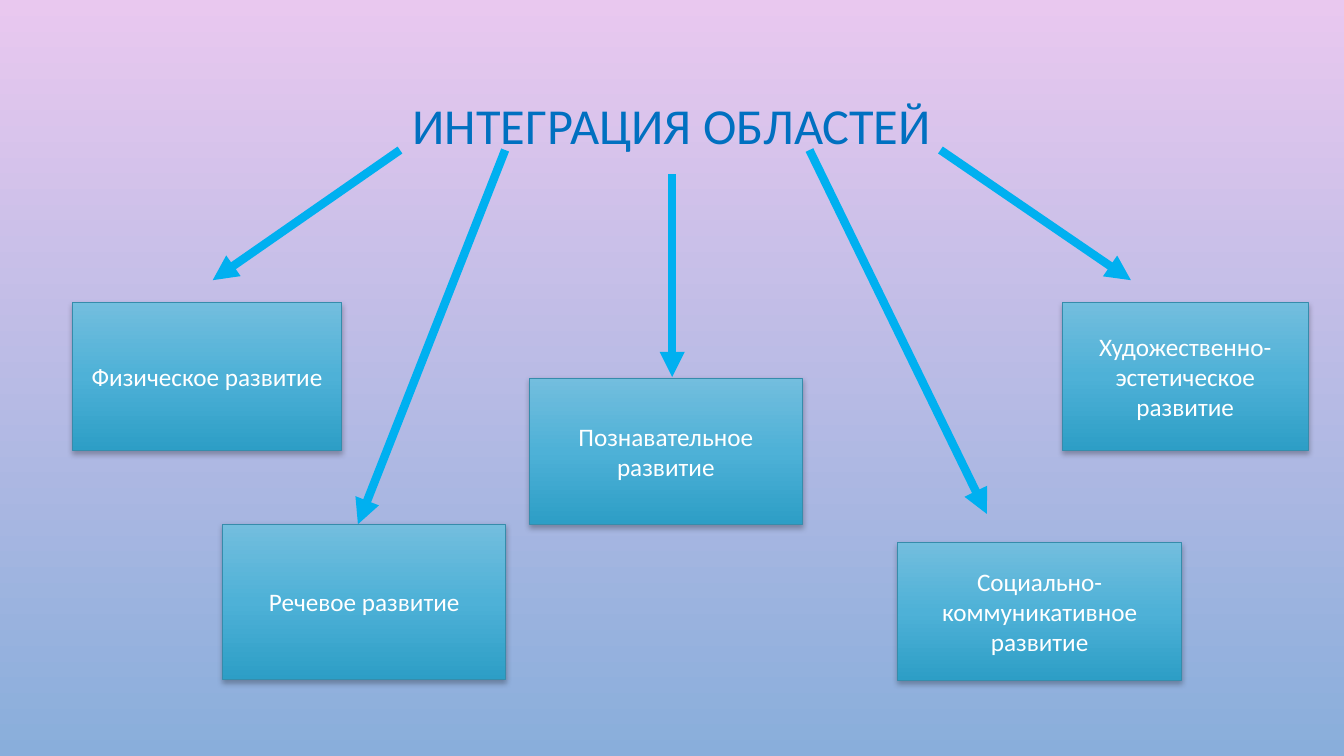
from copy import deepcopy

from lxml.etree import SubElement
from pptx import Presentation
from pptx.dml.color import RGBColor
from pptx.enum.shapes import MSO_CONNECTOR, MSO_SHAPE
from pptx.enum.text import MSO_ANCHOR, PP_ALIGN
from pptx.oxml.ns import qn
from pptx.util import Cm, Pt


def rgb(value):
    return RGBColor.from_string(value)


def write_centred(shape, text, size, color):
    frame = shape.text_frame
    frame.word_wrap = True
    frame.vertical_anchor = MSO_ANCHOR.MIDDLE
    paragraph = frame.paragraphs[0]
    paragraph.text = text
    paragraph.alignment = PP_ALIGN.CENTER
    paragraph.font.name = "Calibri"
    paragraph.font.size = Pt(size)
    paragraph.font.color.rgb = rgb(color)
    return paragraph


presentation = Presentation()
presentation.slide_width = Cm(33.87)
presentation.slide_height = Cm(19.05)
slide = presentation.slides.add_slide(presentation.slide_layouts[6])

background = slide.background.fill
background.gradient()
background.gradient_angle = 270
for stop, color in zip(background.gradient_stops, ("E9C8EF", "89AEDB")):
    stop.color.rgb = rgb(color)

title = slide.shapes.add_textbox(Cm(2.54), Cm(1.73), Cm(28.78), Cm(3.02))
write_centred(title, "ИНТЕГРАЦИЯ ОБЛАСТЕЙ", 36, "0070C0").line_spacing = 0.9

# Start x, start y, end x, end y in cm
arrows = [
    (16.94, 4.39, 16.94, 9.5),
    (20.4, 3.78, 24.87, 12.95),
    (23.7, 3.78, 28.5, 7.06),
    (12.73, 3.78, 9.02, 13.21),
    (10.08, 3.78, 5.36, 7.06),
]
for ends in arrows:
    arrow = slide.shapes.add_connector(MSO_CONNECTOR.STRAIGHT, *map(Cm, ends))
    arrow.line.color.rgb = rgb("00B0F0")
    arrow.line.width = Pt(6)
    properties = arrow._element.spPr
    SubElement(properties.find(qn("a:ln")), qn("a:tailEnd"), type="triangle")
    SubElement(properties, qn("a:effectLst"))

# Text, left, top, width, height in cm
areas = [
    ("Познавательное развитие", 13.34, 9.53, 6.88, 3.68),
    ("Художественно-эстетическое развитие", 26.77, 7.62, 6.2, 3.73),
    ("Социально-коммуникативное развитие", 22.63, 13.67, 7.14, 3.48),
    ("Речевое развитие", 5.61, 13.21, 7.14, 3.91),
    ("Физическое развитие", 1.83, 7.62, 6.78, 3.73),
]
for text, *bounds in areas:
    box = slide.shapes.add_shape(MSO_SHAPE.RECTANGLE, *map(Cm, bounds))
    box.line.color.rgb = rgb("368CAB")
    box.line.width = Pt(0.75)
    write_centred(box, text, 18, "FFFFFF")

    box.fill.gradient()
    box.fill.gradient_angle = 270
    properties = box._element.spPr
    stop_list = properties.find(qn("a:gradFill")).find(qn("a:gsLst"))
    middle = deepcopy(stop_list[0])
    middle.set("pos", "50000")
    stop_list.insert(1, middle)
    for stop, color in zip(box.fill.gradient_stops, ("73BEDE", "4EB1D7", "2D9EC6")):
        stop.color.rgb = rgb(color)

    box.shadow.inherit = False
    shadow = SubElement(
        properties.find(qn("a:effectLst")), qn("a:outerShdw"),
        blurRad=str(Pt(4)), dist=str(Pt(2)), dir="5400000", rotWithShape="0",
    )
    shadow_color = SubElement(shadow, qn("a:srgbClr"), val="000000")
    SubElement(shadow_color, qn("a:alpha"), val="28000")

presentation.save("out.pptx")
